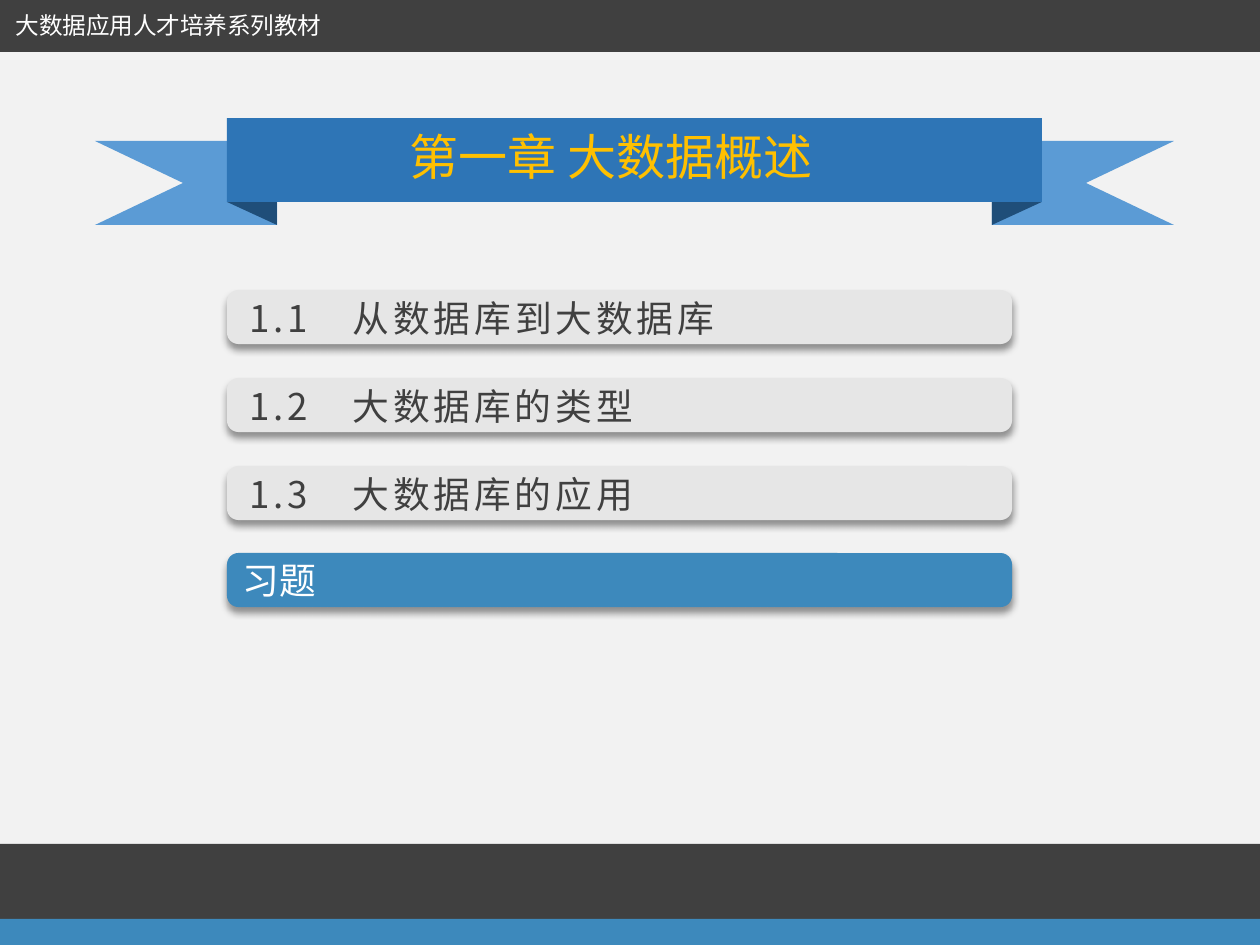
from dataclasses import dataclass

from lxml.etree import SubElement
from pptx import Presentation
from pptx.dml.color import RGBColor as Rgb
from pptx.enum.shapes import MSO_SHAPE as Shape
from pptx.enum.text import MSO_ANCHOR as Anchor, PP_ALIGN as Align
from pptx.oxml.ns import qn
from pptx.util import Emu, Pt

PX = 914400 / 126


@dataclass(frozen=True)
class Theme:
    """Colours, font and type sizes of the deck."""
    paper: str = "F2F2F2"
    dark: str = "404040"
    accent: str = "3D89BC"
    band: str = "2E75B6"
    tail: str = "5B9BD5"
    fold: str = "1F4E79"
    row: str = "E6E6E6"
    gold: str = "FFC000"
    white: str = "FFFFFF"
    shadow: str = "000000"
    font: str = "Noto Sans CJK SC"
    title_size: float = 28
    row_size: float = 21
    series_size: float = 13.5


THEME = Theme()


def px(length):
    """Turn pixels into EMU."""
    return Emu(round(length * PX))


def paint(shape, color):
    """Give a shape a flat fill without line or shadow."""
    shape.fill.solid()
    shape.fill.fore_color.rgb = Rgb.from_string(color)
    shape.line.fill.background()
    shape.shadow.inherit = False
    return shape


def add_block(shapes, kind, box, color):
    """Add a flat preset shape in a pixel box."""
    return paint(shapes.add_shape(kind, *map(px, box)), color)


def write(frame, text, size, color, align=Align.LEFT, spacing=0):
    """Set one styled paragraph in a text frame."""
    line = frame.paragraphs[0]
    line.text = text
    line.alignment = align
    font = line.font
    font.size = Pt(size)
    font.color.rgb = Rgb.from_string(color)
    font.name = THEME.font
    SubElement(font._element, qn("a:ea"), typeface=THEME.font)
    if spacing:
        font._element.set("spc", str(round(spacing * 100)))


def add_label(shapes, box, *style, **options):
    """Add an unwrapped text box in a pixel box."""
    frame = shapes.add_textbox(*map(px, box)).text_frame
    frame.word_wrap = False
    write(frame, *style, **options)


def add_ribbon(slide, box, title):
    """Draw the chapter title on a folded ribbon."""
    left, top, width, height = box
    shapes = slide.shapes.add_group_shape().shapes
    inset, fold_width, drop = 132, 50, 23
    band_height = height - drop
    tail_width = inset + fold_width
    for mirrored in (False, True):
        def across(x):
            return left + (width - x if mirrored else x)

        outline = [(0, drop), (tail_width, drop), (tail_width, height),
                   (0, height), (88, drop + band_height / 2)]
        start, *rest = [(px(across(x)), px(top + y)) for x, y in outline]
        builder = shapes.build_freeform(*start)
        builder.add_line_segments(rest, close=True)
        paint(builder.convert_to_shape(), THEME.tail)

        fold_left = min(across(inset), across(tail_width))
        fold = add_block(shapes, Shape.RIGHT_TRIANGLE,
                         (fold_left, top + band_height, fold_width, drop),
                         THEME.fold)
        flips = fold._element.spPr.xfrm
        flips.set("flipV", "1")
        flips.set("flipH", "0" if mirrored else "1")
    add_block(shapes, Shape.RECTANGLE,
              (left + inset, top, width - 2 * inset, band_height), THEME.band)
    add_label(shapes, (left + 298, top + 2, 436, 72), title,
              THEME.title_size, THEME.gold, align=Align.CENTER)


def add_bar(shapes, box, color):
    """Draw a rounded bar with a soft shadow below."""
    bar = add_block(shapes, Shape.ROUNDED_RECTANGLE, box, color)
    bar.adjustments[0] = 0.21
    effects = bar._element.spPr.find(qn("a:effectLst"))
    shadow = SubElement(effects, qn("a:outerShdw"), blurRad=str(Pt(4)),
                        dist=str(Pt(3)), dir="5400000", algn="t",
                        rotWithShape="0")
    tint = SubElement(shadow, qn("a:srgbClr"), val=THEME.shadow)
    SubElement(tint, qn("a:alpha"), val="40000")
    return bar


def add_contents(slide, box, sections, exercises, pitch=88):
    """List the sections, then the highlighted exercises bar."""
    left, top, width, height = box
    for index, (number, heading) in enumerate(sections):
        row_top = top + index * pitch
        shapes = slide.shapes.add_group_shape().shapes
        add_bar(shapes, (left, row_top, width, height), THEME.row)
        label_width = 131 + 41 * len(heading)
        add_label(shapes, (left + 10, row_top, label_width, 57),
                  f"{number}　{heading}", THEME.row_size, THEME.dark,
                  spacing=2.2)
    last_top = top + len(sections) * pitch - 1
    current = add_bar(slide.shapes, (left, last_top, width, height),
                      THEME.accent)
    current.text_frame.vertical_anchor = Anchor.MIDDLE
    write(current.text_frame, exercises, THEME.row_size, THEME.white)


def add_header(slide, box, series):
    """Draw the top strip with the series name."""
    left, top, _, _ = box
    add_block(slide.shapes, Shape.RECTANGLE, box, THEME.dark)
    add_label(slide.shapes, (left + 2, top + 6, 335, 42), series,
              THEME.series_size, THEME.white, align=Align.CENTER)


def add_footer(slide, box):
    """Draw the dark strip and the accent strip under it."""
    left, top, width, height = box
    accent_height = 26
    dark_height = height - accent_height
    add_block(slide.shapes, Shape.RECTANGLE,
              (left, top, width, dark_height), THEME.dark)
    add_block(slide.shapes, Shape.RECTANGLE,
              (left, top + dark_height, width, accent_height), THEME.accent)


def main():
    """Build the chapter contents slide."""
    deck = Presentation()
    deck.slide_width, deck.slide_height = px(1260), px(945)
    slide = deck.slides.add_slide(deck.slide_layouts[6])
    slide.background.fill.solid()
    slide.background.fill.fore_color.rgb = Rgb.from_string(THEME.paper)
    add_ribbon(slide, (95, 118, 1079, 107), "第一章 大数据概述")
    add_header(slide, (-1, -1, 1262, 53), "大数据应用人才培养系列教材")
    add_footer(slide, (0, 844, 1260, 101))
    add_contents(slide, (227, 290, 785, 54),
                 [("1.1", "从数据库到大数据库"),
                  ("1.2", "大数据库的类型"),
                  ("1.3", "大数据库的应用")],
                 "习题")
    deck.save("out.pptx")


if __name__ == "__main__":
    main()
